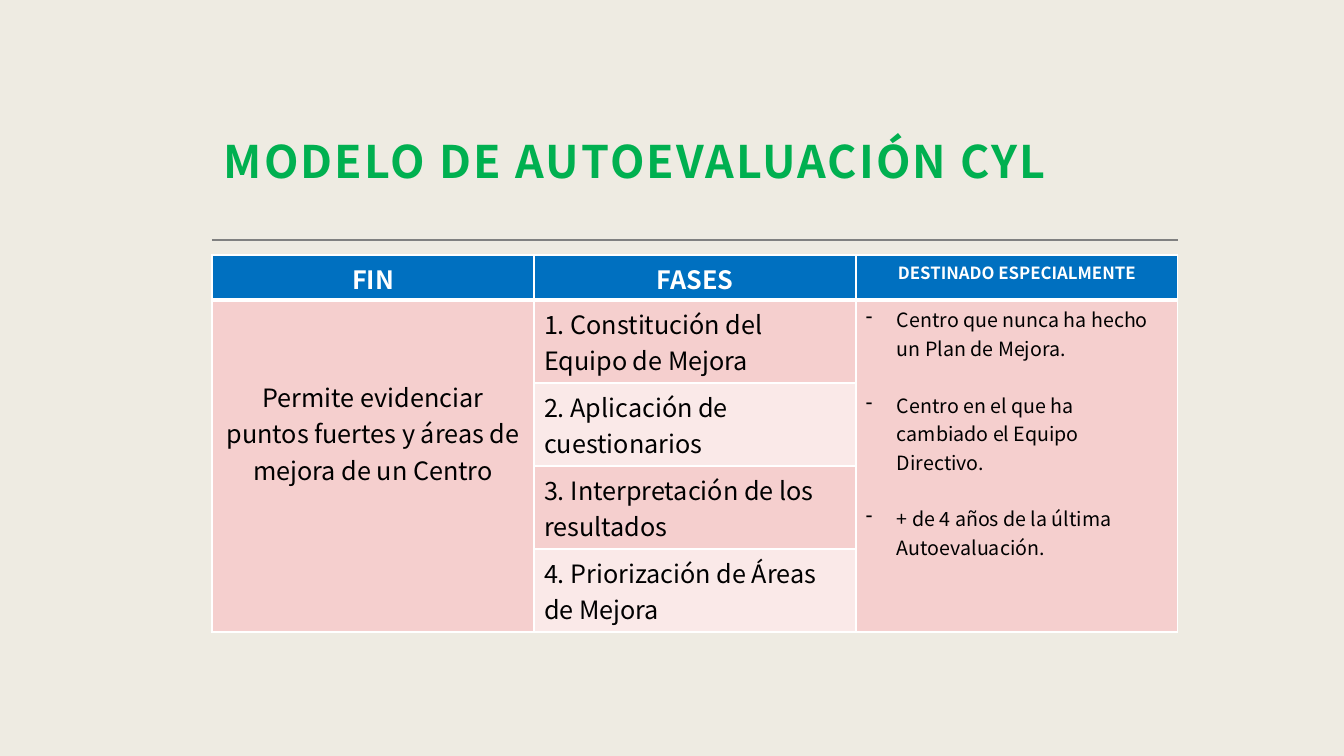
import lxml.etree
import pptx
import pptx.dml.color
import pptx.enum.shapes
import pptx.enum.text
import pptx.oxml.ns
import pptx.util

PX = 914400 / 100.8
FONT = "Noto Sans CJK JP"
WHITE, BLUE, GREEN, GRAY = "FFFFFF", "0070C0", "00B050", "808080"
BANDS = ["F5CFCE", "FAE9E8"]
HEADS = [("FIN", 18), ("FASES", 18), ("DESTINADO ESPECIALMENTE", 12)]
GOAL = "Permite evidenciar puntos fuertes y áreas de mejora de un Centro"
STEPS = [
    "1. Constitución del Equipo de Mejora",
    "2. Aplicación de cuestionarios",
    "3. Interpretación de los resultados",
    "4. Priorización de Áreas de Mejora",
]
CASES = [
    "Centro que nunca ha hecho un Plan de Mejora.",
    "Centro en el que ha cambiado el Equipo Directivo.",
    "+ de 4 años de la última Autoevaluación.",
]
ALIGN = pptx.enum.text.PP_ALIGN


def px(num):
    """Turn pixels into EMU."""
    return pptx.util.Emu(round(num * PX))


def color(code):
    """Turn a hex string into a colour."""
    return pptx.dml.color.RGBColor.from_string(code)


def node(root, tag, **attrs):
    """Append a DrawingML element to root."""
    return lxml.etree.SubElement(root, pptx.oxml.ns.qn(tag), attrs)


def write(frame, text, size=18, ink="000000", bold=False, align=ALIGN.LEFT,
          track=0, lead=None, dash=False, gap=0):
    """Write each line of text as a paragraph with one format."""
    for i, line in enumerate(text.split("\n")):
        para = frame.add_paragraph() if i else frame.paragraphs[0]
        para.alignment = align
        if lead:
            para.line_spacing = lead
        if gap and i:
            para.space_before = pptx.util.Pt(gap)
        if dash:
            props = para._p.get_or_add_pPr()
            props.set("marL", str(px(31)))
            props.set("indent", str(-px(31)))
            node(props, "a:buFontTx")
            node(props, "a:buChar", char="-")
        run = para.add_run()
        run.text = line
        font = run.font
        font.name, font.size, font.bold = FONT, pptx.util.Pt(size), bold
        font.color.rgb = color(ink)
        node(run._r.get_or_add_rPr(), "a:ea", typeface=FONT)
        if track:
            run._r.get_or_add_rPr().set("spc", str(track))


def paint(cell, fill, base=1):
    """Fill a cell and give it white borders."""
    props = cell._tc.get_or_add_tcPr()
    for side, wide in zip("LRTB", (1, 1, 1, base)):
        line = node(props, "a:ln" + side, w=str(pptx.util.Pt(wide)))
        node(node(line, "a:solidFill"), "a:srgbClr", val=WHITE)
    cell.fill.solid()
    cell.fill.fore_color.rgb = color(fill)


def title(slide, x, y, w, h):
    """Place the title and the rule below it."""
    box = slide.shapes.add_textbox(px(x), px(y), px(w), px(h - 43))
    frame = box.text_frame
    frame.word_wrap = True
    frame.vertical_anchor = pptx.enum.text.MSO_ANCHOR.BOTTOM
    frame.margin_left = frame.margin_right = frame.margin_top = px(12)
    frame.margin_bottom = px(10)
    write(frame, "MODELO DE AUTOEVALUACIÓN CYL", size=32, ink=GREEN,
          bold=True, track=150, lead=1.3)
    rule = slide.shapes.add_connector(
        pptx.enum.shapes.MSO_CONNECTOR.STRAIGHT,
        px(x), px(y + h), px(x + w), px(y + h))
    rule.line.color.rgb = color(GRAY)
    rule.line.width = pptx.util.Pt(2)
    node(rule._element.spPr, "a:effectLst")


def grid(slide, x, y, w, h):
    """Place the table of aim, phases and target centres."""
    rows, cols, top = len(STEPS) + 1, len(HEADS), 45
    table = slide.shapes.add_table(
        rows, cols, px(x), px(y), px(w), px(h)).table
    table.horz_banding = False
    for col in table.columns:
        col.width = px(w / cols)
    for i, row in enumerate(table.rows):
        row.height = px((h - top) / len(STEPS) if i else top)
    for j, (text, size) in enumerate(HEADS):
        cell = table.cell(0, j)
        paint(cell, BLUE, base=3)
        write(cell.text_frame, text, size=size, ink=WHITE, bold=True,
              align=ALIGN.CENTER)
    for i, text in enumerate(STEPS):
        for j in range(cols):
            paint(table.cell(i + 1, j), BANDS[i % 2 if j == 1 else 0])
        write(table.cell(i + 1, 1).text_frame, text)
    for j in (0, 2):
        table.cell(1, j).merge(table.cell(rows - 1, j))
    goal = table.cell(1, 0)
    goal.margin_top = px(78)
    write(goal.text_frame, GOAL, align=ALIGN.CENTER)
    write(table.cell(1, 2).text_frame, "\n".join(CASES), size=14,
          dash=True, gap=20)


def main():
    """Build the slide and save it."""
    deck = pptx.Presentation()
    deck.slide_width, deck.slide_height = px(1344), px(756)
    slide = deck.slides.add_slide(deck.slide_layouts[6])
    back = slide.background.fill
    back.solid()
    back.fore_color.rgb = color("EEEBE2")
    title(slide, 212, 48, 966, 192)
    grid(slide, 212, 255, 966, 377)
    deck.save("out.pptx")


if __name__ == "__main__":
    main()
